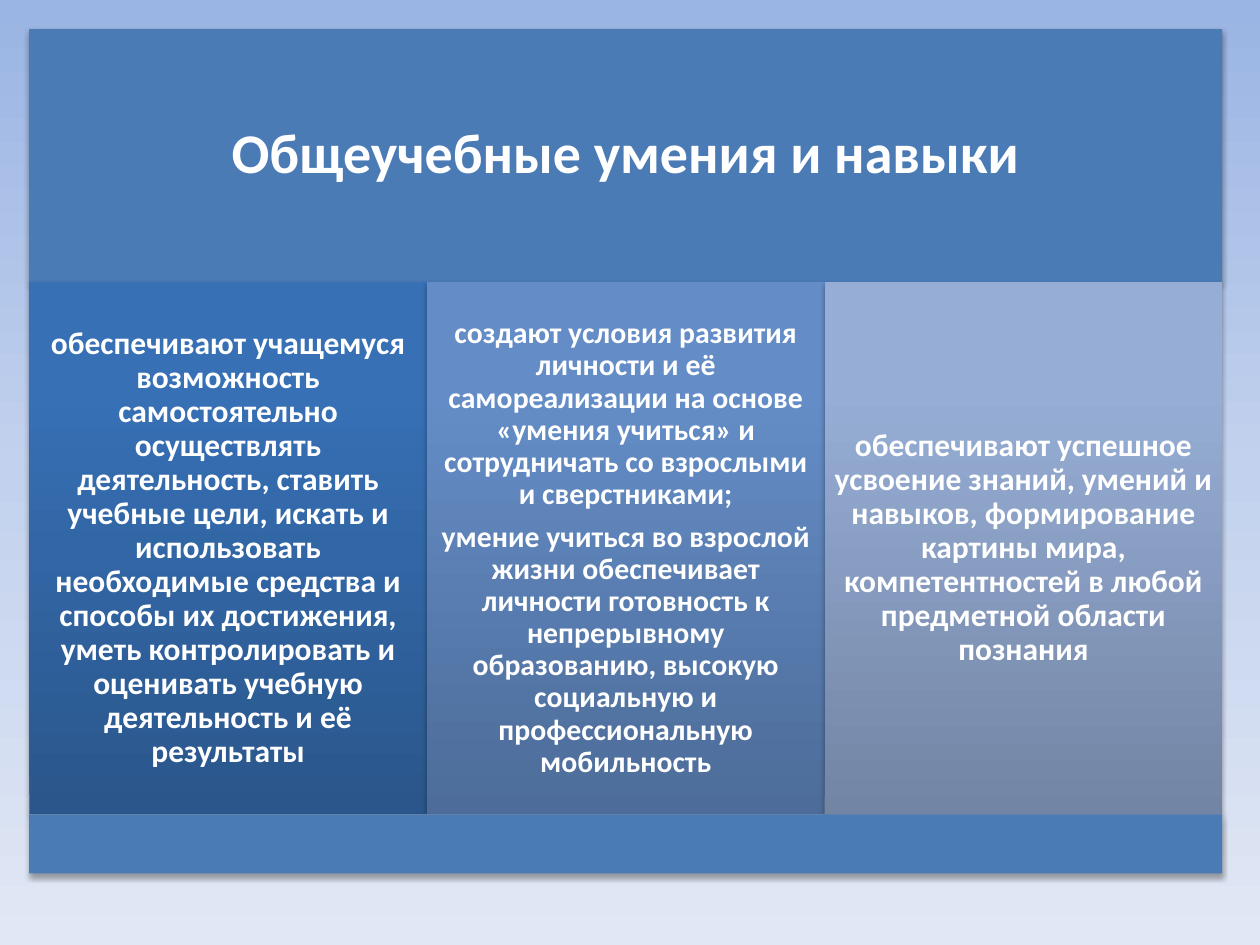
import dataclasses

import pptx
import pptx.dml.color
import pptx.enum.shapes
import pptx.enum.text
import pptx.oxml
import pptx.oxml.ns
import pptx.util

Cm = pptx.util.Cm
Pt = pptx.util.Pt


@dataclasses.dataclass(frozen=True)
class Theme:
    font: str = "Calibri"
    text: str = "FFFFFF"
    band: str = "4B7BB5"
    background: tuple = ((0, "9AB5E4"), (50, "C2D1ED"), (100, "E1E8F5"))
    panels: tuple = (
        ((0, "2A568B"), (80, "3770B5"), (100, "3570B8")),
        ((0, "4D6C99"), (80, "648DC7"), (100, "638DCA")),
        ((0, "7385A4"), (80, "96ADD5"), (100, "95ADD7")),
    )
    title_size: int = 32
    panel_sizes: tuple = (18, 17, 18)


THEME = Theme()

LEFT, TOP, WIDTH = 0.59, 0.59, 24.05
TITLE_HEIGHT, PANEL_HEIGHT, FOOT_HEIGHT = 5.1, 10.73, 1.19

TITLE = "Общеучебные умения и навыки"
PANELS = (
    ("обеспечивают учащемуся возможность самостоятельно осуществлять "
     "деятельность, ставить учебные цели, искать и использовать необходимые "
     "средства и способы их достижения, уметь контролировать и оценивать "
     "учебную деятельность и её результаты",),
    ("создают условия развития личности и её самореализации на основе "
     "«умения учиться» и сотрудничать со взрослыми и сверстниками;",
     "умение учиться во взрослой жизни обеспечивает личности готовность к "
     "непрерывному образованию, высокую социальную и профессиональную "
     "мобильность"),
    ("обеспечивают успешное усвоение знаний, умений и навыков, формирование "
     "картины мира, компетентностей в любой предметной области познания",),
)


def color(value):
    return pptx.dml.color.RGBColor.from_string(value)


def fill_gradient(fill, owner, stops, angle):
    """Fill with (percent, colour) stops; owner is the XML element holding the fill."""
    fill.gradient()
    fill.gradient_angle = angle
    stop_list = next(owner.iter(pptx.oxml.ns.qn("a:gsLst")))
    for stop in list(stop_list):
        stop_list.remove(stop)
    for percent, value in stops:
        stop_list.append(pptx.oxml.parse_xml(
            f'<a:gs {pptx.oxml.ns.nsdecls("a")} pos="{percent * 1000}">'
            f'<a:srgbClr val="{value}"/></a:gs>'))


def add_shadow(box):
    box.shadow.inherit = False
    effects = box._element.spPr.find(pptx.oxml.ns.qn("a:effectLst"))
    effects.append(pptx.oxml.parse_xml(
        f'<a:outerShdw {pptx.oxml.ns.nsdecls("a")} blurRad="{Pt(3.1)}" '
        f'dist="{Pt(1.8)}" dir="5400000" rotWithShape="0">'
        '<a:srgbClr val="000000"><a:alpha val="35000"/></a:srgbClr>'
        '</a:outerShdw>'))


def add_block(page, left, top, width, height):
    box = page.shapes.add_shape(
        pptx.enum.shapes.MSO_SHAPE.RECTANGLE,
        Cm(left), Cm(top), Cm(width), Cm(height))
    box.line.fill.background()
    add_shadow(box)
    return box


def add_band(page, top, height):
    box = add_block(page, LEFT, top, WIDTH, height)
    box.fill.solid()
    box.fill.fore_color.rgb = color(THEME.band)
    return box


def write(box, texts, size, inset):
    frame = box.text_frame
    frame.word_wrap = True
    frame.vertical_anchor = pptx.enum.text.MSO_ANCHOR.MIDDLE
    frame.margin_left = frame.margin_right = Cm(inset)
    frame.margin_top = frame.margin_bottom = Cm(inset)
    for index, text in enumerate(texts):
        para = frame.add_paragraph() if index else frame.paragraphs[0]
        para.text = text
        para.alignment = pptx.enum.text.PP_ALIGN.CENTER
        para.line_spacing = 0.9
        para.space_after = Pt(round(size * 0.35))
        para.font.name = THEME.font
        para.font.size = Pt(size)
        para.font.bold = True
        para.font.color.rgb = color(THEME.text)


def add_panels(page, top):
    width = WIDTH / len(PANELS)
    for index, (texts, stops, size) in enumerate(
            zip(PANELS, THEME.panels, THEME.panel_sizes)):
        box = add_block(page, LEFT + index * width, top, width, PANEL_HEIGHT)
        fill_gradient(box.fill, box._element.spPr, stops, 90)
        write(box, texts, size, 0.18)


def main():
    deck = pptx.Presentation()
    deck.slide_width, deck.slide_height = Cm(25.4), Cm(19.05)
    page = deck.slides.add_slide(deck.slide_layouts[6])
    fill_gradient(page.background.fill, page._element, THEME.background, 270)

    panel_top = TOP + TITLE_HEIGHT
    title = add_band(page, TOP, TITLE_HEIGHT)
    write(title, (TITLE,), THEME.title_size, 0.34)
    add_panels(page, panel_top)
    add_band(page, panel_top + PANEL_HEIGHT, FOOT_HEIGHT)
    deck.save("out.pptx")


if __name__ == "__main__":
    main()
